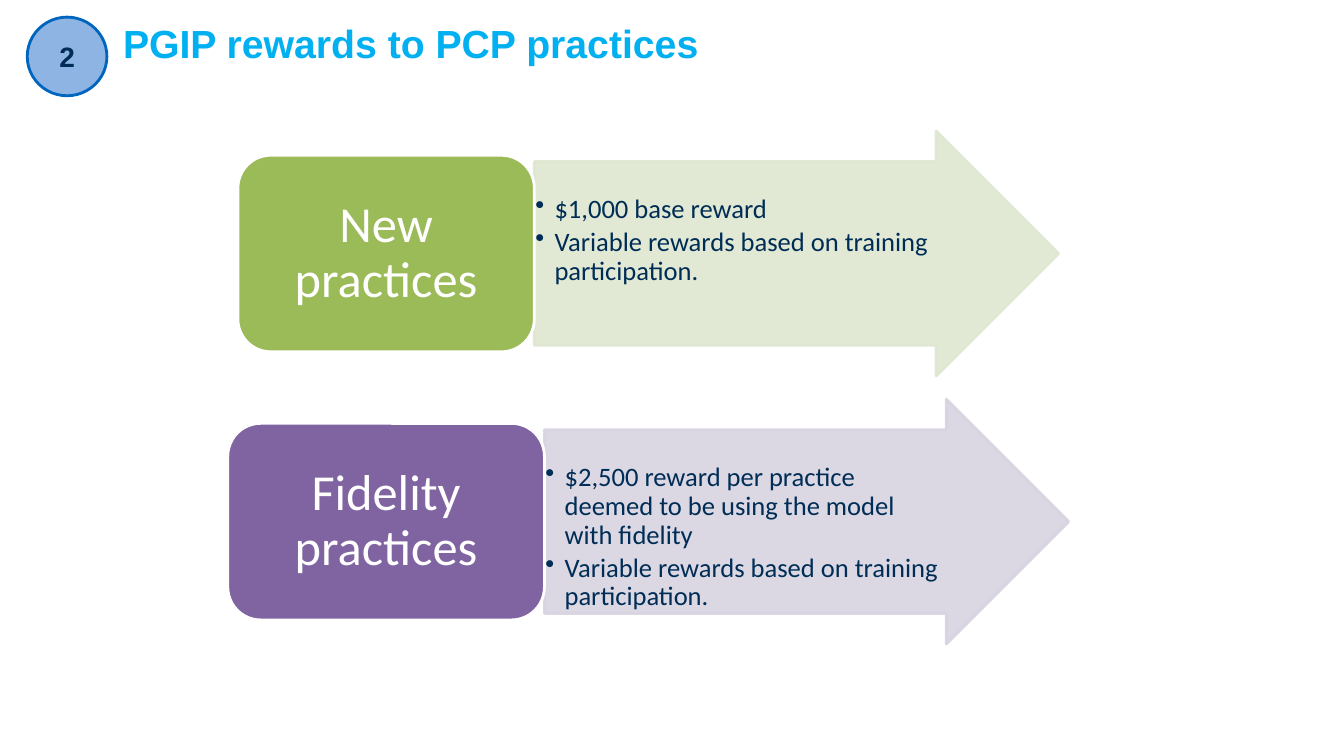
from dataclasses import dataclass

from lxml import etree
from pptx import Presentation
from pptx.dml.color import RGBColor
from pptx.enum.shapes import MSO_SHAPE
from pptx.enum.text import MSO_ANCHOR, MSO_AUTO_SIZE, PP_ALIGN
from pptx.oxml.ns import qn
from pptx.util import Emu, Pt

ELLIPSE, ARROW, ROUNDED = MSO_SHAPE.OVAL, MSO_SHAPE.RIGHT_ARROW, MSO_SHAPE.ROUNDED_RECTANGLE
TOP, MIDDLE = MSO_ANCHOR.TOP, MSO_ANCHOR.MIDDLE
LEFT, CENTER = PP_ALIGN.LEFT, PP_ALIGN.CENTER
NO_AUTOFIT = MSO_AUTO_SIZE.NONE

PX = 9144  # 100 px to the inch
SLIDE_W, SLIDE_H = 1333, 750
TITLE_ONLY = 5


@dataclass(frozen=True)
class Theme:
    heading_font: str = "Arial"
    body_font: str = "Calibri"
    title: str = "00B0F0"
    ink: str = "002D55"
    white: str = "FFFFFF"
    badge: str = "8EB4E3"
    badge_line: str = "0065BF"
    title_size: int = 28
    badge_size: int = 20
    label_size: int = 36
    detail_size: int = 19
    line_width: int = 2
    arrow_opacity: int = 90


THEME = Theme()

ROWS = [
    {
        "label": "New practices",
        "details": ["$1,000 base reward",
                    "Variable rewards based on training participation."],
        "box": (236, 130, 814, 243),
        "label_w": 294,
        "colour": "9BBB59",
        "tint": "DEE7D1",
    },
    {
        "label": "Fidelity practices",
        "details": ["$2,500 reward per practice deemed to be using the model with fidelity",
                    "Variable rewards based on training participation."],
        "box": (226, 396, 834, 243),
        "label_w": 314,
        "colour": "8064A2",
        "tint": "D8D3E0",
    },
]


def px(*lengths):
    return [Emu(length * PX) for length in lengths]


def set_format(target, values):
    for name, value in values.items():
        setattr(target, name, value)


def set_font(font, name, size, colour, bold=False):
    set_format(font, {"name": name, "size": Pt(size), "bold": bold})
    font.color.rgb = RGBColor.from_string(colour)


def set_frame(frame, insets, anchor):
    left, top, right, bottom = px(*insets)
    set_format(frame, {
        "word_wrap": True, "auto_size": NO_AUTOFIT, "vertical_anchor": anchor,
        "margin_left": left, "margin_top": top,
        "margin_right": right, "margin_bottom": bottom,
    })


def set_opacity(fill_parent, percent):
    colour = fill_parent.find(qn("a:solidFill"))[0]
    etree.SubElement(colour, qn("a:alpha"), val=str(percent * 1000))


def add_bullet(paragraph, indent):
    properties = paragraph._p.get_or_add_pPr()
    properties.set("marL", str(indent * PX))
    properties.set("indent", str(-indent * PX))
    etree.SubElement(properties, qn("a:buChar"), char="•")


def add_filled(slide, preset, box, fill, line):
    shape = slide.shapes.add_shape(preset, *px(*box))
    shape.shadow.inherit = False
    shape.fill.solid()
    shape.fill.fore_color.rgb = RGBColor.from_string(fill)
    shape.line.color.rgb = RGBColor.from_string(line)
    shape.line.width = Pt(THEME.line_width)
    return shape


def add_header(slide, box, number, heading):
    """Place the numbered badge at the left of the box and the title beside it."""
    x, y, w, h = box
    badge_w, title_x, title_h = 79, 85, 51

    title = slide.shapes.title
    left, top, width, height = px(x + title_x, y, w - title_x, title_h)
    set_format(title, {"left": left, "top": top, "width": width, "height": height})
    set_frame(title.text_frame, (10, 5, 10, 5), MIDDLE)
    title.text_frame.text = heading
    paragraph = title.text_frame.paragraphs[0]
    paragraph.alignment = LEFT
    set_font(paragraph.runs[0].font, THEME.heading_font, THEME.title_size, THEME.title, True)

    badge = add_filled(slide, ELLIPSE, (x, y, badge_w, h), THEME.badge, THEME.badge_line)
    set_frame(badge.text_frame, (0, 0, 0, 0), MIDDLE)
    badge.text_frame.text = number
    paragraph = badge.text_frame.paragraphs[0]
    paragraph.alignment = CENTER
    set_font(paragraph.runs[0].font, THEME.heading_font, THEME.badge_size, THEME.ink, True)


def add_arrow(slide, box, tint, details):
    x, y, w, h = box
    shaft_share, head_share = 0.75, 0.5
    arrow = add_filled(slide, ARROW, box, tint, tint)
    arrow.adjustments[0], arrow.adjustments[1] = shaft_share, head_share
    properties = arrow._element.spPr
    for fill_parent in (properties, properties.find(qn("a:ln"))):
        set_opacity(fill_parent, THEME.arrow_opacity)

    shaft_top = round(h * (1 - shaft_share) / 2)
    head_inner = round(h * head_share * (1 - shaft_share))
    text_w = w - round(h * head_share) + head_inner
    detail_box = slide.shapes.add_textbox(
        *px(x, y + shaft_top, text_w - head_inner * 2 + head_inner, h - 2 * shaft_top))
    frame = detail_box.text_frame
    set_frame(frame, (1, 34, 1, 1), TOP)
    for index, detail in enumerate(details):
        paragraph = frame.add_paragraph() if index else frame.paragraphs[0]
        run = paragraph.add_run()
        run.text = detail
        set_font(run.font, THEME.body_font, THEME.detail_size, THEME.ink)
        set_format(paragraph, {"line_spacing": 0.9, "space_after": Pt(3)})
        add_bullet(paragraph, 19)


def add_label(slide, box, colour, text):
    label = add_filled(slide, ROUNDED, box, colour, THEME.white)
    set_frame(label.text_frame, (15, 7, 15, 7), MIDDLE)
    label.text_frame.text = text
    paragraph = label.text_frame.paragraphs[0]
    set_format(paragraph, {"alignment": CENTER, "line_spacing": 0.9})
    set_font(paragraph.runs[0].font, THEME.body_font, THEME.label_size, THEME.white)


def add_reward_row(slide, row):
    """Place the label at the left of the row's box and the arrow in the rest."""
    x, y, w, h = row["box"]
    label_w = row["label_w"]
    label_inset = round(h / 10)
    add_arrow(slide, (x + label_w, y, w - label_w, h), row["tint"], row["details"])
    add_label(slide, (x, y + label_inset, label_w, h - 2 * label_inset),
              row["colour"], row["label"])


def main():
    deck = Presentation()
    deck.slide_width, deck.slide_height = px(SLIDE_W, SLIDE_H)
    slide = deck.slides.add_slide(deck.slide_layouts[TITLE_ONLY])
    add_header(slide, (27, 17, SLIDE_W - 27, 78), "2", "PGIP rewards to PCP practices")
    for row in ROWS:
        add_reward_row(slide, row)
    deck.save("out.pptx")


if __name__ == "__main__":
    main()
